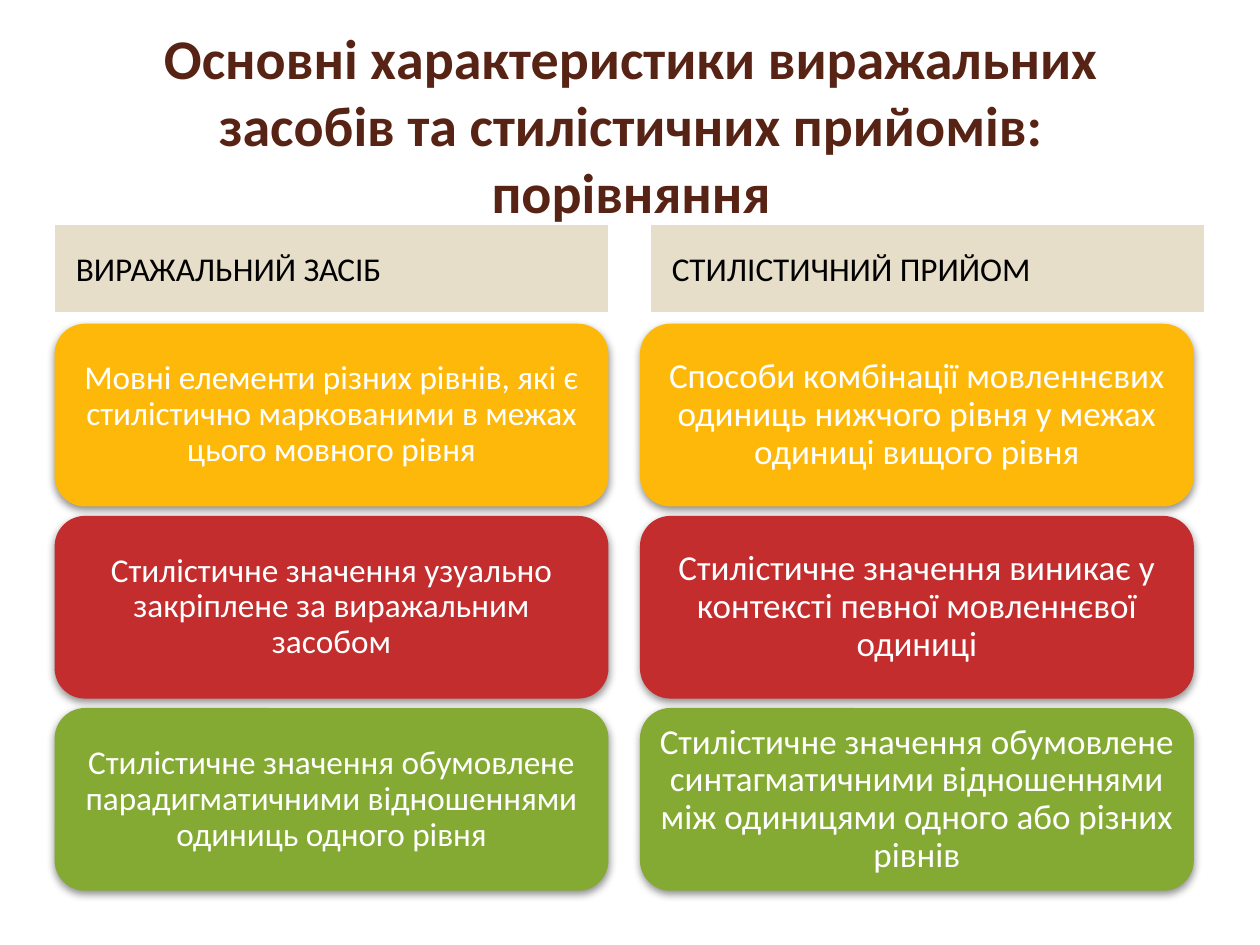
import lxml.etree
import pptx
import pptx.dml.color
import pptx.enum.shapes
import pptx.enum.text
import pptx.oxml.ns
import pptx.util

Pt = pptx.util.Pt
SHAPE = pptx.enum.shapes.MSO_SHAPE
ALIGN = pptx.enum.text.PP_ALIGN
MIDDLE = pptx.enum.text.MSO_ANCHOR.MIDDLE


def rgb(value):
    return pptx.dml.color.RGBColor.from_string(value)


def write(shape, text, color, frame_format, paragraph_format, font_format):
    frame = shape.text_frame
    frame.text = text
    paragraph = frame.paragraphs[0]
    font = paragraph.runs[0].font
    font.color.rgb = rgb(color)
    common_frame = {"word_wrap": True, "vertical_anchor": MIDDLE}
    for target, values in (
        (frame, common_frame | frame_format),
        (paragraph, paragraph_format),
        (font, {"name": "Calibri"} | font_format),
    ):
        for name, value in values.items():
            setattr(target, name, value)


presentation = pptx.Presentation()
presentation.slide_width = Pt(720)
presentation.slide_height = Pt(540)
slide = presentation.slides.add_slide(presentation.slide_layouts[6])

# Title
title = slide.shapes.add_textbox(Pt(36.7), Pt(26), Pt(648), Pt(90))
write(
    title,
    "Основні характеристики виражальних засобів та стилістичних прийомів: порівняння",
    "572314",
    {},
    {"alignment": ALIGN.CENTER},
    {"size": Pt(32), "bold": True},
)

# Columns: heading, heading left, cards left, card text size, card texts
columns = [
    ("ВИРАЖАЛЬНИЙ ЗАСІБ", 31.2, 31.2, 19, [
        "Мовні елементи різних рівнів, які є стилістично маркованими в межах цього мовного рівня",
        "Стилістичне значення узуально закріплене за виражальним засобом",
        "Стилістичне значення обумовлене парадигматичними відношеннями одиниць одного рівня",
    ]),
    ("СТИЛІСТИЧНИЙ ПРИЙОМ", 371.7, 365.7, 20, [
        "Способи комбінації мовленнєвих одиниць нижчого рівня у межах одиниці вищого рівня",
        "Стилістичне значення виникає у контексті певної мовленнєвої одиниці",
        "Стилістичне значення обумовлене синтагматичними відношеннями між одиницями одного або різних рівнів",
    ]),
]
row_colors = ["FEB80A", "C32D2E", "84AA33"]
column_width = 316.5
first_row_top, row_pitch, card_height = 185, 109.8, 104.4

card_frame = {
    "margin_left": Pt(6), "margin_right": Pt(6),
    "margin_top": Pt(3), "margin_bottom": Pt(3),
}
card_paragraph = {"alignment": ALIGN.CENTER, "line_spacing": 0.9}

for heading_text, heading_left, cards_left, text_size, card_texts in columns:
    # Column heading
    heading = slide.shapes.add_shape(
        SHAPE.RECTANGLE, Pt(heading_left), Pt(128.3), Pt(column_width), Pt(50.4))
    heading.shadow.inherit = False
    heading.fill.solid()
    heading.fill.fore_color.rgb = rgb("E7DEC9")
    heading.line.color.rgb = rgb("FFFFFF")
    heading.line.width = Pt(0.85)
    write(
        heading, heading_text, "000000",
        {"margin_left": Pt(12.2)},
        {"alignment": ALIGN.LEFT, "space_before": Pt(1)},
        {"size": Pt(19)},
    )

    # Cards with a soft shadow below
    for row, (card_text, row_color) in enumerate(zip(card_texts, row_colors)):
        card = slide.shapes.add_shape(
            SHAPE.ROUNDED_RECTANGLE,
            Pt(cards_left), Pt(first_row_top + row * row_pitch),
            Pt(column_width), Pt(card_height))
        card.fill.solid()
        card.fill.fore_color.rgb = rgb(row_color)
        card.line.fill.background()
        card.shadow.inherit = False
        effects = card.element.spPr.find(pptx.oxml.ns.qn("a:effectLst"))
        shadow = lxml.etree.SubElement(
            effects, pptx.oxml.ns.qn("a:outerShdw"),
            blurRad=str(Pt(5)), dist=str(Pt(2)), dir="5400000", rotWithShape="0")
        shadow_color = lxml.etree.SubElement(
            shadow, pptx.oxml.ns.qn("a:srgbClr"), val="000000")
        lxml.etree.SubElement(
            shadow_color, pptx.oxml.ns.qn("a:alpha"), val="43000")
        write(card, card_text, "FFFFFF", card_frame, card_paragraph,
              {"size": Pt(text_size)})

presentation.save("out.pptx")
